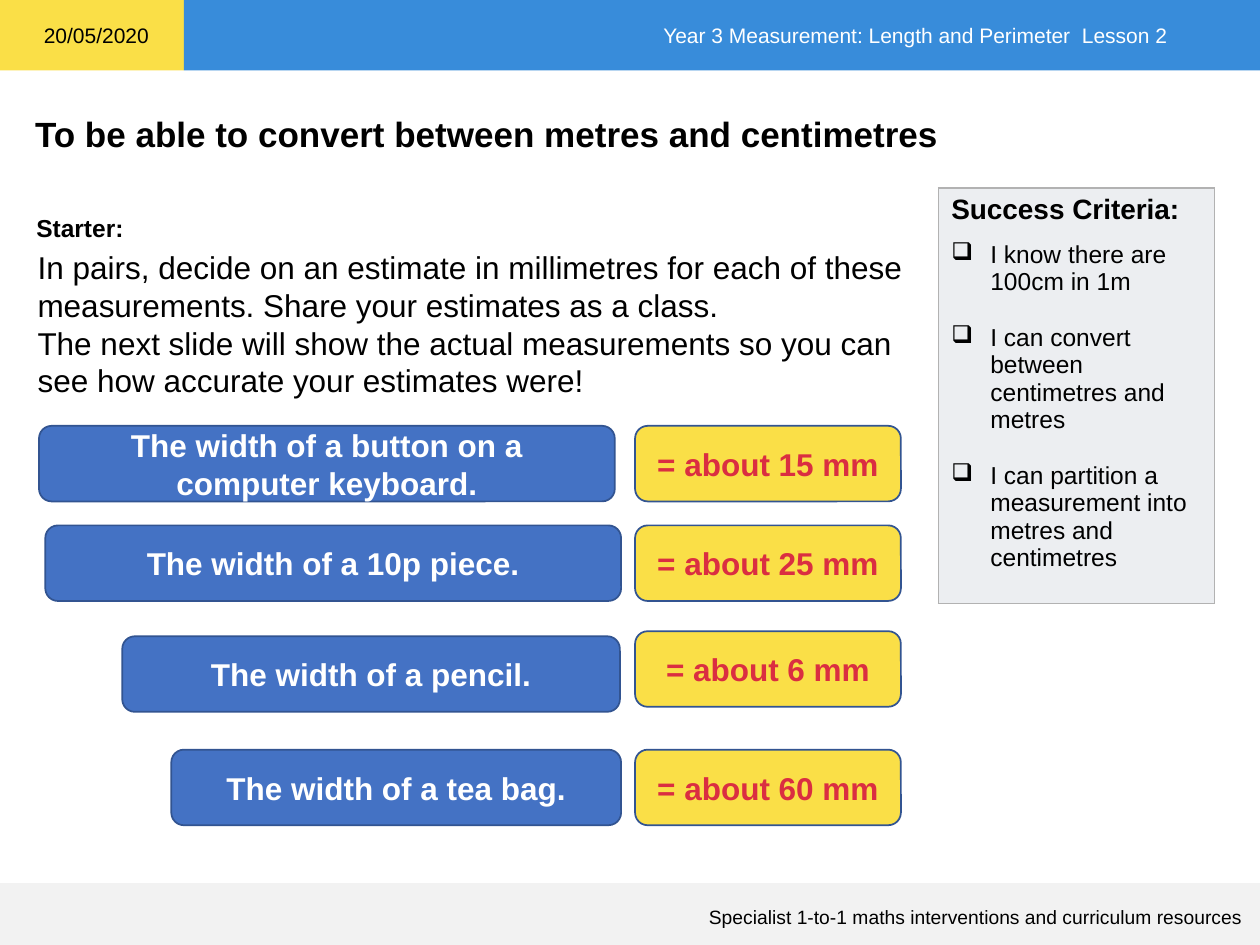
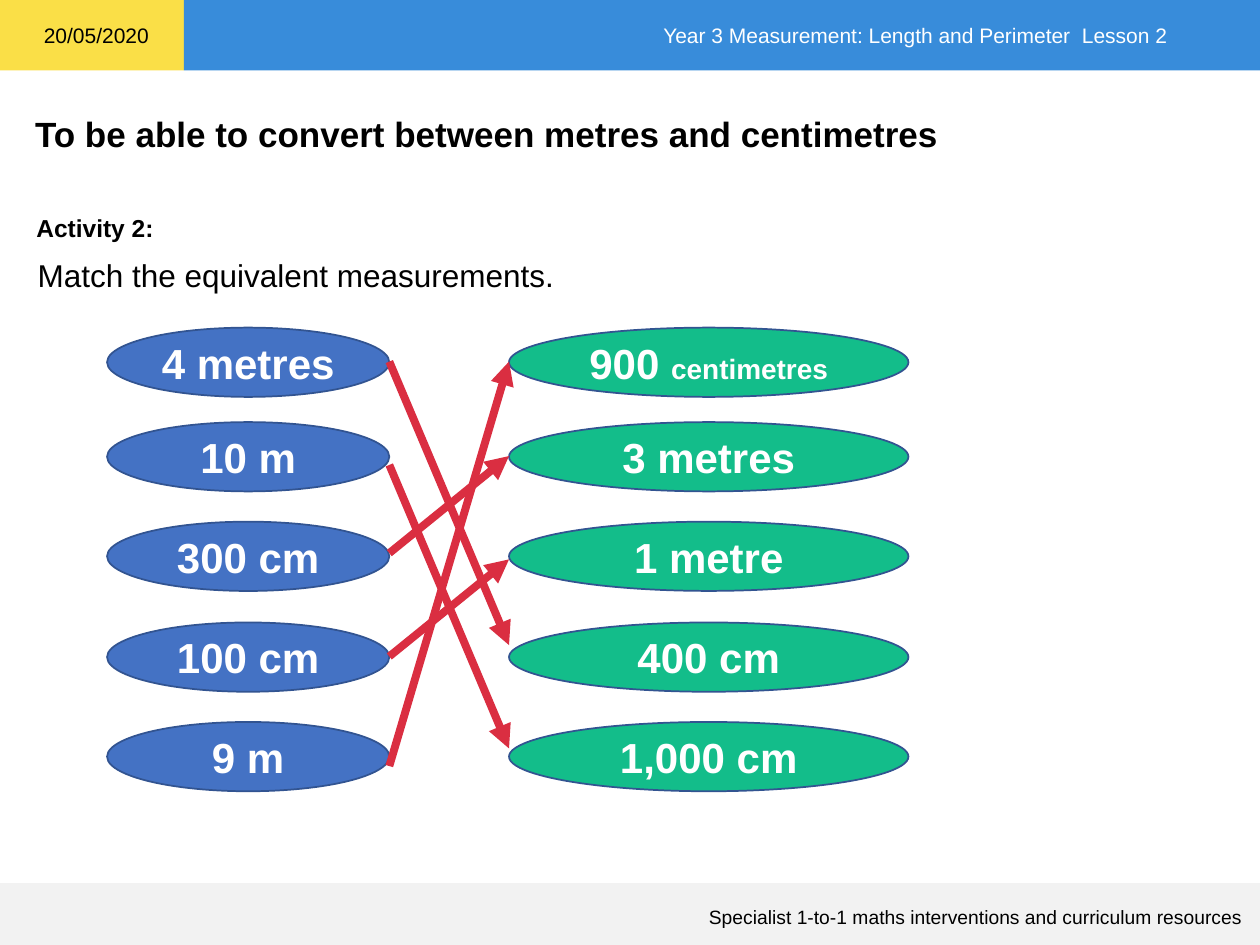
from lxml import etree
from pptx import Presentation
from pptx.dml.color import RGBColor
from pptx.enum.shapes import MSO_CONNECTOR, MSO_SHAPE
from pptx.enum.text import MSO_ANCHOR, PP_ALIGN
from pptx.oxml.ns import qn
from pptx.util import Inches, Pt

RECTANGLE, ROUNDED, OVAL = MSO_SHAPE.RECTANGLE, MSO_SHAPE.ROUNDED_RECTANGLE, MSO_SHAPE.OVAL
STRAIGHT = MSO_CONNECTOR.STRAIGHT
MIDDLE = MSO_ANCHOR.MIDDLE
LEFT, CENTER, RIGHT = PP_ALIGN.LEFT, PP_ALIGN.CENTER, PP_ALIGN.RIGHT

FONT = "Arial"
BLACK, WHITE = "000000", "FFFFFF"
YELLOW, SKY, PALE_GREY = "FADF47", "388CDA", "F2F2F2"
BLUE, OUTLINE, GREEN, RED = "4472C4", "325491", "13BD8A", "DA2E41"
PANEL, PANEL_BORDER = "ECEEF1", "B2B2B2"

DATE = "20/05/2020"
LESSON = "Year 3 Measurement: Length and Perimeter  Lesson 2"
TITLE = "To be able to convert between metres and centimetres"
FOOTER = "Specialist 1-to-1 maths interventions and curriculum resources"

STARTER_LINES = [
    "In pairs, decide on an estimate in millimetres for each of these",
    "measurements. Share your estimates as a class.",
    "The next slide will show the actual measurements so you can",
    "see how accurate your estimates were!",
]
# Question, its left, width and top, then answer and its top
ESTIMATES = [
    ("The width of a button on a computer keyboard.", 0.31, 4.57, 3.38, "= about 15 mm", 3.38),
    ("The width of a 10p piece.", 0.36, 4.57, 4.17, "= about 25 mm", 4.17),
    ("The width of a pencil.", 0.97, 3.95, 5.05, "= about 6 mm", 5.01),
    ("The width of a tea bag.", 1.36, 3.57, 5.95, "= about 60 mm", 5.95),
]
CRITERIA = [
    "I know there are 100cm in 1m",
    "I can convert between centimetres and metres",
    "I can partition a measurement into metres and centimetres",
]
# Row top, left measurement, right measurement as (text, size) runs
MATCHES = [
    (2.6, "4 metres", [("900 ", 24), ("centimetres", 16)]),
    (3.35, "10 m", [("3 metres", 24)]),
    (4.14, "300 cm", [("1 metre", 24)]),
    (4.94, "100 cm", [("400 cm", 24)]),
    (5.73, "9 m", [("1,000 cm", 24)]),
]
# Start and end heights of the answer arrows
ARROWS = [(2.87, 5.12), (3.69, 5.94), (4.39, 3.62), (5.21, 4.44), (6.08, 2.87)]


def rgb(value):
    return RGBColor.from_string(value)


def add_run(paragraph, text, size, color=BLACK, bold=False):
    run = paragraph.add_run()
    run.text = text
    font = run.font
    font.name, font.size, font.bold = FONT, Pt(size), bold
    font.color.rgb = rgb(color)


def add_text(slide, box, lines, size, bold=False, align=LEFT, wrap=True):
    shape = slide.shapes.add_textbox(*map(Inches, box))
    frame = shape.text_frame
    frame.word_wrap = wrap
    for index, line in enumerate(lines):
        paragraph = frame.add_paragraph() if index else frame.paragraphs[0]
        paragraph.alignment = align
        add_run(paragraph, line, size, bold=bold)
    return shape


def add_block(slide, kind, box, fill, runs=(), color=WHITE, bold=True, align=CENTER, line=OUTLINE):
    shape = slide.shapes.add_shape(kind, *map(Inches, box))
    shape.shadow.inherit = False
    shape.fill.solid()
    shape.fill.fore_color.rgb = rgb(fill)
    if line:
        shape.line.color.rgb = rgb(line)
        shape.line.width = Pt(1)
    else:
        shape.line.fill.background()
    frame = shape.text_frame
    frame.word_wrap = True
    frame.vertical_anchor = MIDDLE
    paragraph = frame.paragraphs[0]
    paragraph.alignment = align
    for text, size in runs:
        add_run(paragraph, text, size, color, bold)
    return shape


def add_arrow(slide, start, end):
    connector = slide.shapes.add_connector(STRAIGHT, *map(Inches, start + end))
    connector.line.color.rgb = rgb(RED)
    connector.line.width = Pt(4.5)
    etree.SubElement(connector.line._get_or_add_ln(), qn("a:tailEnd"), type="triangle")
    etree.SubElement(connector._element.spPr, qn("a:effectLst"))


def add_lesson_slide(presentation, heading):
    slide = presentation.slides.add_slide(presentation.slide_layouts[6])
    # Header band with date and lesson
    add_block(slide, RECTANGLE, (0, 0, 1.46, 0.56), YELLOW, line=None)
    band = add_block(slide, RECTANGLE, (1.46, 0, 8.54, 0.56), SKY, [(LESSON, 12)],
                     bold=False, align=RIGHT, line=None)
    band.text_frame.margin_right = Inches(0.73)
    # Footer band
    add_block(slide, RECTANGLE, (0, 7.01, 10, 0.49), PALE_GREY, line=None)
    footer = add_text(slide, (0.42, 7.13, 9.54, 0.3), [FOOTER], 11, align=RIGHT)
    footer.text_frame.vertical_anchor = MIDDLE
    # Title, date and section heading
    add_text(slide, (0.18, 0.84, 9.77, 0.44), [TITLE], 20, bold=True)
    add_text(slide, (0.25, 0.13, 1.04, 0.3), [DATE], 12, wrap=False)
    add_text(slide, (0.19, 1.64, 1.14, 0.34), [heading], 14, bold=True, wrap=False)
    return slide


def add_criteria_panel(slide, box):
    table_frame = slide.shapes.add_table(1, 1, *map(Inches, box))
    table_frame.table.first_row = False
    table_frame.table.horz_banding = False
    cell = table_frame.table.cell(0, 0)
    # Borders come before the fill in the cell properties
    properties = cell._tc.get_or_add_tcPr()
    for side in ("lnL", "lnR", "lnT", "lnB"):
        border = etree.SubElement(properties, qn(f"a:{side}"), w=str(Pt(1)))
        fill = etree.SubElement(border, qn("a:solidFill"))
        etree.SubElement(fill, qn("a:srgbClr"), val=PANEL_BORDER)
    cell.fill.solid()
    cell.fill.fore_color.rgb = rgb(PANEL)
    # Heading and tick-box list
    frame = cell.text_frame
    add_run(frame.paragraphs[0], "Success Criteria:", 16, bold=True)
    for index, criterion in enumerate(CRITERIA):
        paragraph = frame.add_paragraph()
        indent = Inches(0.31)
        paragraph_properties = paragraph._p.get_or_add_pPr()
        paragraph_properties.set("marL", str(indent))
        paragraph_properties.set("indent", str(-indent))
        paragraph.space_before = Pt(16 if index else 9)
        etree.SubElement(paragraph_properties, qn("a:buChar"), char="❑")
        add_run(paragraph, criterion, 14)


def build_starter(presentation):
    slide = add_lesson_slide(presentation, "Starter:")
    add_text(slide, (0.2, 1.92, 7.2, 1.3), STARTER_LINES, 18)
    for question, left, width, top, answer, answer_top in ESTIMATES:
        add_block(slide, ROUNDED, (left, top, width, 0.6), BLUE, [(question, 18)])
        add_block(slide, ROUNDED, (5.04, answer_top, 2.11, 0.6), YELLOW, [(answer, 18)], RED)
    add_criteria_panel(slide, (7.45, 1.49, 2.19, 3.3))


def build_matching(presentation):
    slide = add_lesson_slide(presentation, "Activity 2:")
    add_text(slide, (0.2, 1.98, 9.61, 0.4), ["Match the equivalent measurements."], 18)
    left, width, right_column = 0.85, 2.24, 4.04
    for top, measurement, equivalent in MATCHES:
        add_block(slide, OVAL, (left, top, width, 0.55), BLUE, [(measurement, 24)])
        add_block(slide, OVAL, (right_column, top, 3.17, 0.55), GREEN, equivalent)
    for start, end in ARROWS:
        add_arrow(slide, (left + width, start), (right_column, end))


def main():
    presentation = Presentation()
    presentation.slide_width, presentation.slide_height = Inches(10), Inches(7.5)
    build_starter(presentation)
    build_matching(presentation)
    presentation.save("out.pptx")


if __name__ == "__main__":
    main()
